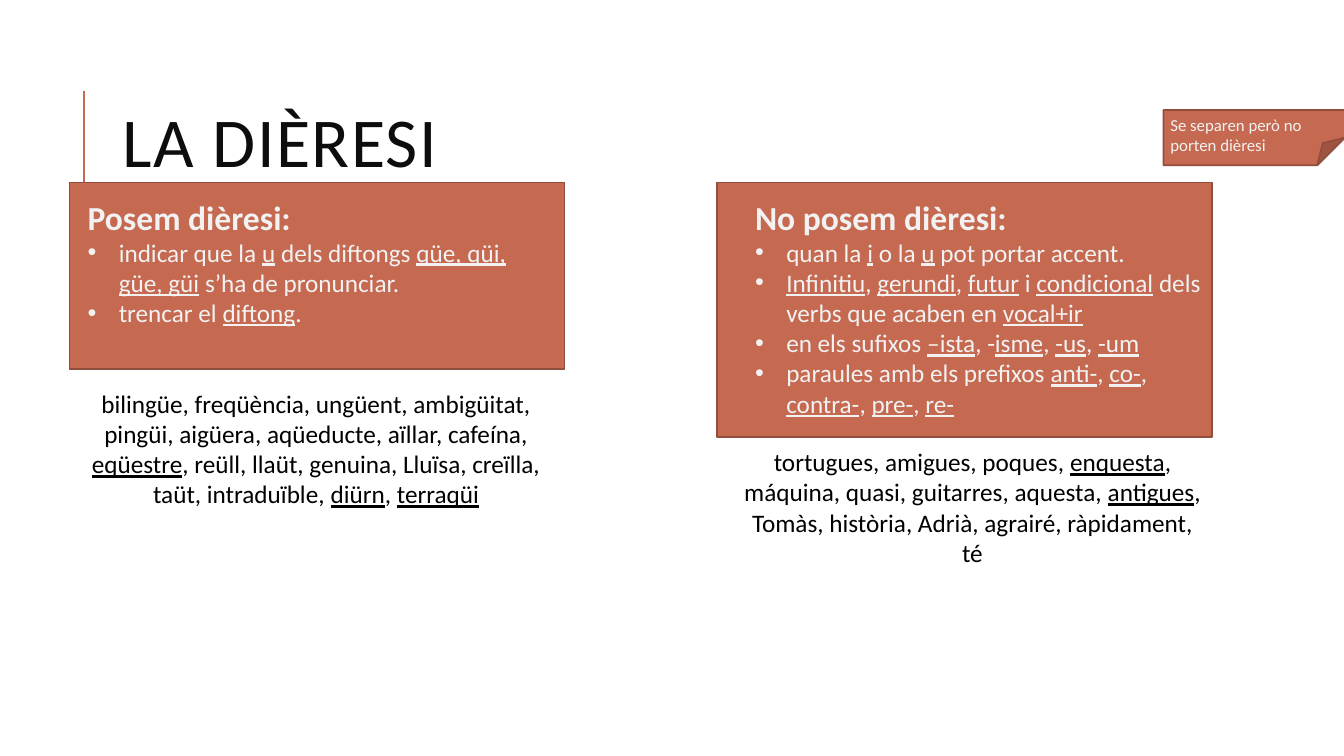
from dataclasses import dataclass

from lxml import etree
from pptx import Presentation
from pptx.dml.color import RGBColor
from pptx.enum.shapes import MSO_CONNECTOR, MSO_SHAPE
from pptx.enum.text import MSO_ANCHOR, PP_ALIGN
from pptx.oxml.ns import qn
from pptx.util import Inches, Pt

RUST, DARK_RUST = "C66951", "924E3C"
PALE, BLACK, NEAR_BLACK = "F2F2F2", "000000", "0D0D0D"
BULLET_INDENT = Inches(0.31)


@dataclass
class Panel:
    left: float
    top: float
    width: float
    height: float
    preset: MSO_SHAPE = MSO_SHAPE.RECTANGLE


@dataclass
class Line:
    """One paragraph; words between underscores are underlined."""
    text: str
    size: float = 18
    color: str = PALE
    bold: bool = False
    bullet: bool = False
    centred: bool = False


@dataclass
class TextBlock:
    left: float
    top: float
    width: float
    height: float
    lines: list[Line]


PANELS = [
    Panel(7.11, 1.81, 4.91, 2.53),
    Panel(0.69, 1.81, 4.91, 1.85),
]
NOTE = Panel(11.54, 1.09, 1.8, 0.55, MSO_SHAPE.FOLDED_CORNER)

TEXT_BLOCKS = [
    TextBlock(0.77, 1.9, 4.82, 1.41, [
        Line("Posem dièresi:", size=24, bold=True),
        Line("indicar que la _u_ dels diftongs _qüe, qüi, güe, güi_ s’ha de pronunciar.", bullet=True),
        Line("trencar el _diftong_.", bullet=True),
    ]),
    TextBlock(7.39, 1.9, 4.82, 2.32, [
        Line("No posem dièresi:", size=24, bold=True),
        Line("quan la _i_ o la _u_ pot portar accent.", bullet=True),
        Line("_Infinitiu_, _gerundi_, _futur_ i _condicional_ dels verbs que acaben en _vocal+ir_", bullet=True),
        Line("en els sufixos _–ista_, -_isme_, _-us_, _-um_", bullet=True),
        Line("paraules amb els prefixos _anti-_, _co-_, _contra-_, _pre-_, _re-_", bullet=True),
    ]),
    TextBlock(0.77, 3.8, 4.73, 1.31, [
        Line("bilingüe, freqüència, ungüent, ambigüitat, pingüi, aigüera, aqüeducte, aïllar, cafeína, "
             "_eqüestre_, reüll, llaüt, genuina, Lluïsa, creïlla, taüt, intraduïble, _diürn_, _terraqüi_",
             color=BLACK, centred=True),
    ]),
    TextBlock(7.28, 4.38, 4.73, 1.31, [
        Line("tortugues, amigues, poques, _enquesta_, máquina, quasi, guitarres, aquesta, _antigues_, "
             "Tomàs, història, Adrià, agrairé, ràpidament, té", color=BLACK, centred=True),
    ]),
]
NOTE_TEXT = TextBlock(11.51, 1.09, 1.8, 0.71, [Line("Se separen però no porten dièresi", size=12)])


def rgb(color: str) -> RGBColor:
    return RGBColor.from_string(color)


def add_panel(page, panel: Panel):
    shape = page.shapes.add_shape(panel.preset, Inches(panel.left), Inches(panel.top),
                                  Inches(panel.width), Inches(panel.height))
    shape.shadow.inherit = False
    shape.fill.solid()
    shape.fill.fore_color.rgb = rgb(RUST)
    shape.line.color.rgb = rgb(DARK_RUST)
    shape.line.width = Pt(1.25)
    return shape


def add_note(page) -> None:
    """Draw the folded note with its corner at half the height."""
    shape = add_panel(page, NOTE)
    geometry = shape._element.spPr.find(qn("a:prstGeom"))
    for old_guides in geometry.findall(qn("a:avLst")):
        geometry.remove(old_guides)
    guides = etree.SubElement(geometry, qn("a:avLst"))
    etree.SubElement(guides, qn("a:gd"), name="adj", fmla="val 50000")
    add_text(page, NOTE_TEXT)


def add_bullet(para) -> None:
    properties = para._p.get_or_add_pPr()
    properties.set("marL", str(BULLET_INDENT))
    properties.set("indent", str(-BULLET_INDENT))
    etree.SubElement(properties, qn("a:buFont")).set("typeface", "Arial")
    etree.SubElement(properties, qn("a:buChar")).set("char", "•")


def write_line(para, line: Line) -> None:
    if line.bullet:
        add_bullet(para)
    if line.centred:
        para.alignment = PP_ALIGN.CENTER
    for index, piece in enumerate(line.text.split("_")):
        if not piece:
            continue
        span = para.add_run()
        span.text = piece
        formats = {"name": "Calibri", "size": Pt(line.size), "bold": line.bold, "underline": index % 2 == 1}
        for name, value in formats.items():
            setattr(span.font, name, value)
        span.font.color.rgb = rgb(line.color)


def add_text(page, block: TextBlock):
    box = page.shapes.add_textbox(Inches(block.left), Inches(block.top),
                                  Inches(block.width), Inches(block.height))
    frame = box.text_frame
    frame.word_wrap = True
    for index, line in enumerate(block.lines):
        write_line(frame.add_paragraph() if index else frame.paragraphs[0], line)
    return box


def add_title(page) -> None:
    title = TextBlock(1.12, 0.64, 10.63, 1.64, [Line("LA DIÈRESI", size=50, color=NEAR_BLACK)])
    frame = add_text(page, title).text_frame
    frame.vertical_anchor = MSO_ANCHOR.MIDDLE
    para = frame.paragraphs[0]
    para.line_spacing = 0.8
    para.runs[0]._r.get_or_add_rPr().set("spc", "100")


def add_title_rule(page) -> None:
    rule = page.shapes.add_connector(MSO_CONNECTOR.STRAIGHT, Inches(0.83), Inches(1.9),
                                     Inches(0.83), Inches(0.9))
    rule.line.color.rgb = rgb(RUST)
    rule.line.width = Pt(1.5)
    etree.SubElement(rule._element.spPr, qn("a:effectLst"))


def main() -> None:
    deck = Presentation()
    deck.slide_width, deck.slide_height = Inches(13.33), Inches(7.5)
    page = deck.slides.add_slide(deck.slide_layouts[6])
    add_title_rule(page)
    for panel in PANELS:
        add_panel(page, panel)
    add_title(page)
    for block in TEXT_BLOCKS:
        add_text(page, block)
    add_note(page)
    deck.save("out.pptx")


if __name__ == "__main__":
    main()
